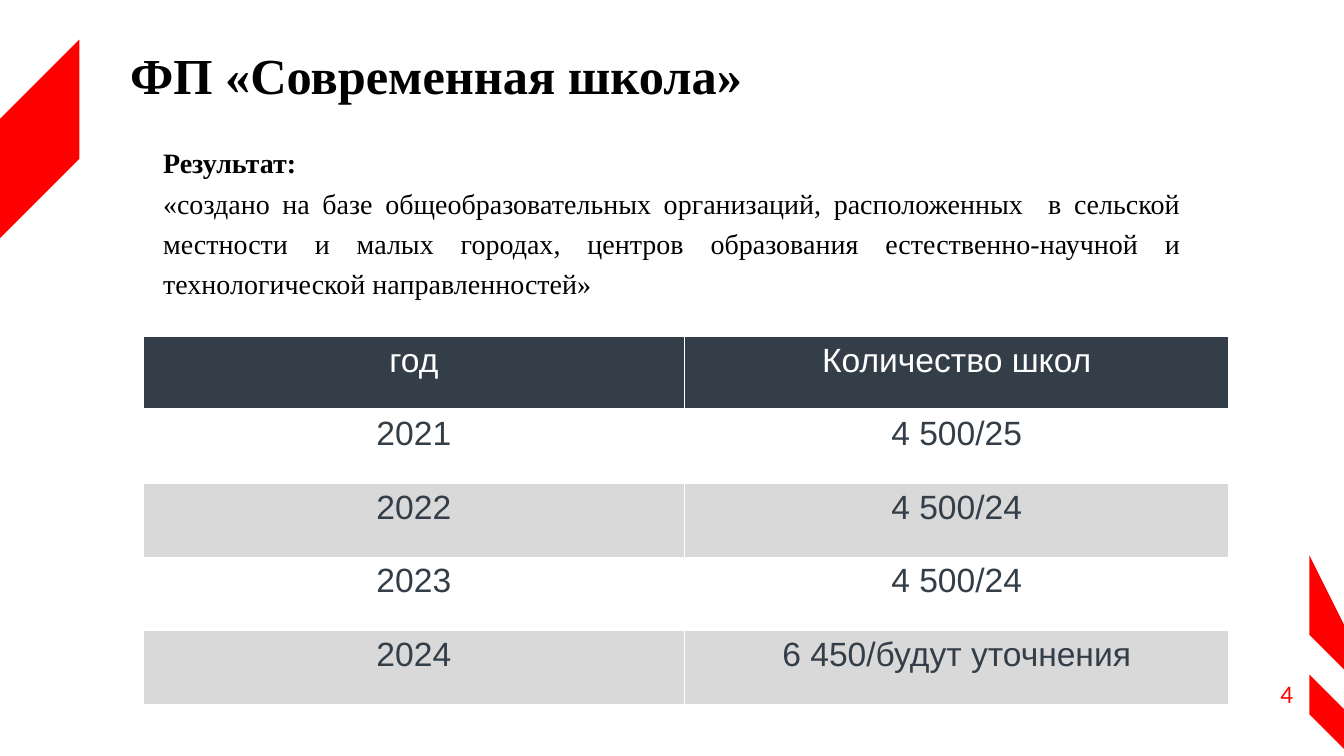
from lxml import etree
from pptx import Presentation
from pptx import util as u
from pptx.dml.color import RGBColor
from pptx.enum import text
from pptx.oxml.ns import qn

TITLE = "ФП «Современная школа»"
RESULT = [
    ("Результат:", True),
    ("«создано на базе общеобразовательных организаций, расположенных  в сельской местности "
     "и малых городах, центров образования естественно-научной и технологической "
     "направленностей»", False),
]
SCHOOLS = [
    ("год", "Количество школ"),
    ("2021", "4 500/25"),
    ("2022", "4 500/24"),
    ("2023", "4 500/24"),
    ("2024", "6 450/будут уточнения"),
]
PAGE = "4"
STRIPES = [  # corner points in cm
    [(0, 5.84), (0, 2.82), (2.11, 0.71), (2.08, 3.73)],
    [(33.87, 17.32), (32.59, 16.05), (32.59, 14.27), (33.87, 15.54)],
    [(33.87, 18.77), (33.12, 18.01), (33.12, 16.97), (33.87, 17.73)],
]
COLORS = {"red": "FF0000", "dark": "333E48", "band": "D9D9D9", "white": "FFFFFF", "black": "000000"}
COL_WIDTHS = (13.64, 13.72)
ROW_HEIGHT = 1.854
INSET = u.Cm(0.13)
ALIGN = text.PP_ALIGN


def rgb(name):
    return RGBColor.from_string(COLORS[name])


def set_font(p, name, size, color, bold=False):
    f = p.font
    f.name, f.size, f.bold = name, u.Pt(size), bold
    f.color.rgb = rgb(color)


def set_insets(holder):
    holder.margin_left = holder.margin_right = INSET
    holder.margin_top = holder.margin_bottom = INSET


def add_text(s, x, y, w, h):
    tf = s.shapes.add_textbox(u.Cm(x), u.Cm(y), u.Cm(w), u.Cm(h)).text_frame
    tf.word_wrap = True
    return tf


def add_stripe(s, points):
    fb = s.shapes.build_freeform(*points[0], scale=u.Cm(1))
    fb.add_line_segments(points[1:], close=True)
    sp = fb.convert_to_shape()
    sp.shadow.inherit = False
    sp.fill.solid()
    sp.fill.fore_color.rgb = rgb("red")
    sp.line.fill.background()


def add_borders(cell, header):
    tc_pr = cell._tc.get_or_add_tcPr()
    for side in "LRTB":
        width = 3 if header and side == "B" else 1
        ln = etree.SubElement(tc_pr, qn(f"a:ln{side}"), w=str(u.Pt(width)))
        fill = etree.SubElement(ln, qn("a:solidFill"))
        etree.SubElement(fill, qn("a:srgbClr"), val=COLORS["white"])


def add_schools_table(s):
    rows, cols = len(SCHOOLS), len(COL_WIDTHS)
    table = s.shapes.add_table(rows, cols, u.Cm(3.61), u.Cm(8.48),
                               u.Cm(sum(COL_WIDTHS)), u.Cm(ROW_HEIGHT * rows)).table
    for column, width in zip(table.columns, COL_WIDTHS):
        column.width = u.Cm(width)
    for i, values in enumerate(SCHOOLS):
        table.rows[i].height = u.Cm(ROW_HEIGHT)
        fill = "dark" if i == 0 else ("band", "white")[i % 2]
        for j, value in enumerate(values):
            cell = table.cell(i, j)
            set_insets(cell)
            add_borders(cell, header=i == 0)
            cell.fill.solid()
            cell.fill.fore_color.rgb = rgb(fill)
            p = cell.text_frame.paragraphs[0]
            p.text, p.alignment = value, ALIGN.CENTER
            set_font(p, "Arial", 24, "white" if i == 0 else "dark")


def main():
    prs = Presentation()
    prs.slide_width, prs.slide_height = u.Cm(33.87), u.Cm(19.05)
    s = prs.slides.add_slide(prs.slide_layouts[6])

    for points in STRIPES:
        add_stripe(s, points)

    tf = add_text(s, 31.45, 16.97, 1.27, 1.02)
    set_insets(tf)
    p = tf.paragraphs[0]
    p.text, p.alignment = PAGE, ALIGN.RIGHT
    set_font(p, "Calibri", 18, "red")

    add_schools_table(s)

    tf = add_text(s, 3.15, 1.14, 26.87, 1.65)
    set_insets(tf)
    tf.vertical_anchor = text.MSO_ANCHOR.MIDDLE
    p = tf.paragraphs[0]
    p.text, p.line_spacing = TITLE, 0.9
    set_font(p, "Times New Roman", 36, "black", True)

    tf = add_text(s, 3.86, 3.38, 26.14, 4.37)
    for i, (line, bold) in enumerate(RESULT):
        p = tf.add_paragraph() if i else tf.paragraphs[0]
        p.text, p.alignment, p.line_spacing = line, ALIGN.JUSTIFY, 1.2
        set_font(p, "Times New Roman", 20, "black", bold)

    prs.save("out.pptx")


if __name__ == "__main__":
    main()
